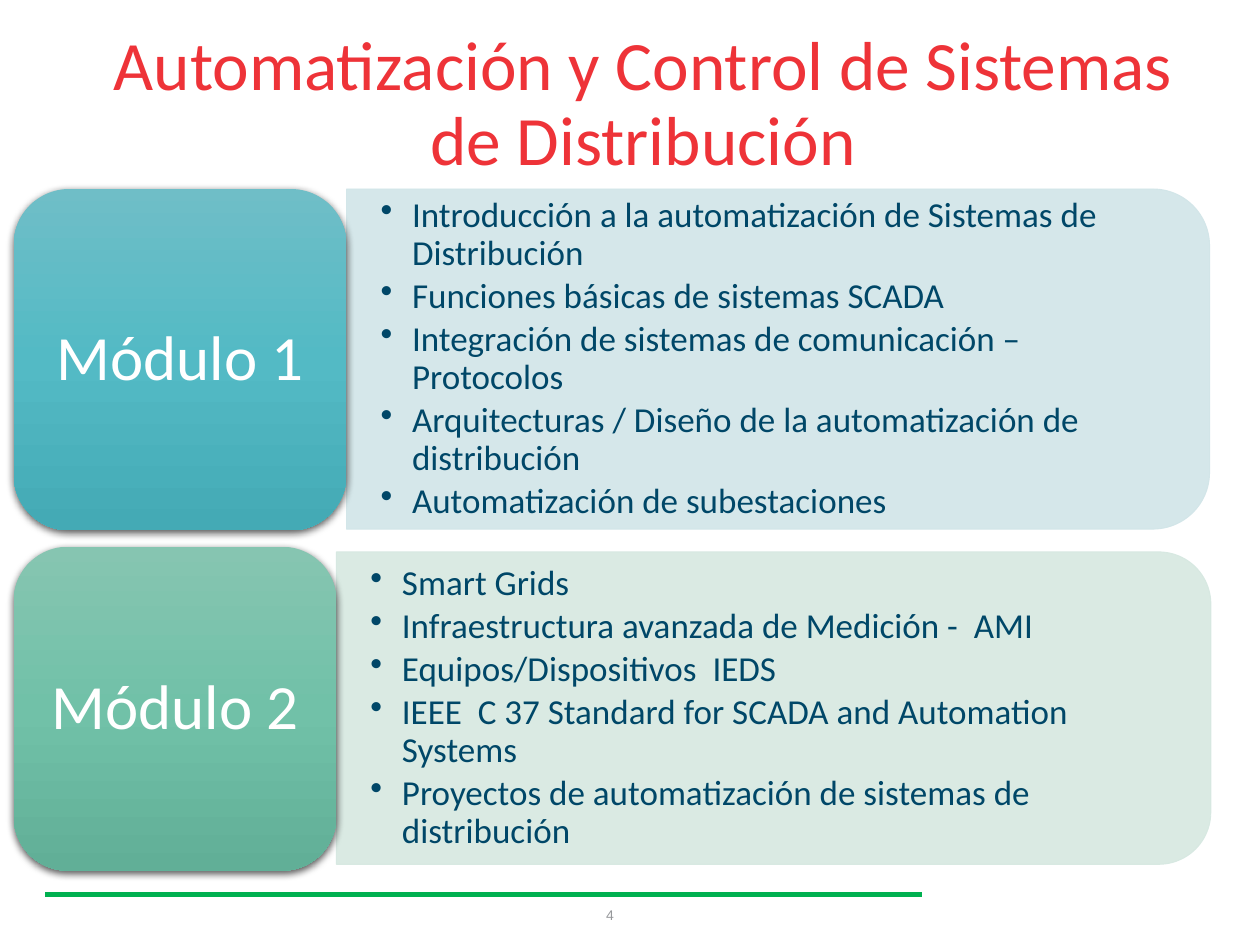
from dataclasses import dataclass

from pptx import Presentation
from pptx.dml.color import RGBColor
from pptx.enum.shapes import MSO_CONNECTOR, MSO_SHAPE
from pptx.enum.text import MSO_ANCHOR, PP_ALIGN
from pptx.oxml import parse_xml
from pptx.oxml.ns import qn
from pptx.util import Inches, Pt
from lxml import etree

NS = 'xmlns:a="http://schemas.openxmlformats.org/drawingml/2006/main"'
ROUND = MSO_SHAPE.ROUNDED_RECTANGLE
TAB = MSO_SHAPE.ROUND_2_SAME_RECTANGLE
STRAIGHT = MSO_CONNECTOR.STRAIGHT
MIDDLE = MSO_ANCHOR.MIDDLE
CENTER, LEFT, RIGHT = PP_ALIGN.CENTER, PP_ALIGN.LEFT, PP_ALIGN.RIGHT


@dataclass(frozen=True)
class Theme:
    font: str = "Calibri"
    small_font: str = "Arial"
    red: str = "EE3338"
    navy: str = "004768"
    white: str = "FFFFFF"
    gray: str = "96989B"
    green: str = "00B050"
    title: float = 39.6
    label: float = 36
    body: float = 20
    number: float = 8


THEME = Theme()

# Each module: name, topics, top, label size, panel top and size, colours
MODULES = [
    ("Módulo 1",
     ["Introducción a la automatización de Sistemas de Distribución",
      "Funciones básicas de sistemas SCADA",
      "Integración de sistemas de comunicación –Protocolos",
      "Arquitecturas / Diseño de la automatización de distribución",
      "Automatización de subestaciones"],
     (0.11, 1.5, 2.64, 2.71), (2.75, 1.5, 6.85, 2.7),
     ("6FBEC7", "53BAC5", "44AAB5"), "D1E5E8"),
    ("Módulo 2",
     ["Smart Grids",
      "Infraestructura avanzada de Medición -  AMI",
      "Equipos/Dispositivos  IEDS",
      "IEEE  C 37 Standard for SCADA and Automation Systems",
      "Proyectos de automatización de sistemas de distribución"],
     (0.11, 4.34, 2.56, 2.57), (2.67, 4.38, 6.94, 2.48),
     ("86C5B1", "71C1A8", "61AF97"), "D6E8E1"),
]


def add_text(slide, box, lines, size, color, align=LEFT, font=THEME.font,
             pad=(0.1, 0.05), after=0, bullet=False):
    frame = slide.shapes.add_textbox(*map(Inches, box)).text_frame
    frame.word_wrap = True
    frame.vertical_anchor = MIDDLE
    frame.margin_left = frame.margin_right = Inches(pad[0])
    frame.margin_top = frame.margin_bottom = Inches(pad[1])
    frame.text = "\n".join(lines)
    for para in frame.paragraphs:
        para.alignment = align
        para.line_spacing = 0.9
        para.space_after = Pt(after)
        if bullet:
            props = para._p.get_or_add_pPr()
            props.set("marL", str(Inches(0.25)))
            props.set("indent", str(-Inches(0.25)))
            etree.SubElement(props, qn("a:buChar")).set("char", "•")
        for run in para.runs:
            run.font.name = font
            run.font.size = Pt(size)
            run.font.color.rgb = RGBColor.from_string(color)


def fade(fill, percent):
    color = fill._xPr.find(qn("a:solidFill"))[0]
    etree.SubElement(color, qn("a:alpha")).set("val", str(percent * 1000))


def add_panel(slide, box, topics, color):
    """Place a tab turned a quarter, so that its round end faces right."""
    x, y, w, h = box
    turned = (x + (w - h) / 2, y + (h - w) / 2, h, w)
    tab = slide.shapes.add_shape(TAB, *map(Inches, turned))
    tab.rotation = 90
    tab.shadow.inherit = False
    tab.line.width = Pt(0.5)
    for fill in (tab.fill, tab.line.fill):
        fill.solid()
        fill.fore_color.rgb = RGBColor.from_string(color)
        fade(fill, 90)
    inset = 0.13
    add_text(slide, (x, y + inset, w - inset, h - 2 * inset), topics,
             THEME.body, THEME.navy, pad=(0.27, 0.14), after=3, bullet=True)


def add_label(slide, box, name, colors):
    x, y, w, h = box
    tile = slide.shapes.add_shape(ROUND, *map(Inches, box))
    tile.line.fill.background()
    tile.fill.background()
    stops = "".join(
        f'<a:gs pos="{i * 50000}"><a:srgbClr val="{color}"/></a:gs>'
        for i, color in enumerate(colors))
    props = tile._element.spPr
    props.replace(props.find(qn("a:noFill")), parse_xml(
        f'<a:gradFill {NS} rotWithShape="1"><a:gsLst>{stops}</a:gsLst>'
        '<a:lin ang="5400000" scaled="0"/></a:gradFill>'))
    props.append(parse_xml(
        f'<a:effectLst {NS}><a:outerShdw blurRad="{Pt(4.5)}" dist="{Pt(1.5)}" '
        'dir="5400000" rotWithShape="0"><a:srgbClr val="000000">'
        '<a:alpha val="63000"/></a:srgbClr></a:outerShdw></a:effectLst>'))
    inset = 0.13
    add_text(slide, (x + inset, y + inset, w - 2 * inset, h - 2 * inset),
             [name], THEME.label, THEME.white, CENTER, pad=(0.15, 0.07),
             after=12.6)


def add_footer(slide, box, number):
    x, y, w, h = box
    rule = slide.shapes.add_connector(
        STRAIGHT, *map(Inches, (x, y + 0.03, x + w, y + 0.03)))
    rule.line.color.rgb = RGBColor.from_string(THEME.green)
    rule.line.width = Pt(3)
    etree.SubElement(rule._element.spPr, qn("a:effectLst"))
    add_text(slide, (x + 2.36, y, 2.25, h), [number], THEME.number,
             THEME.gray, RIGHT, THEME.small_font)


def main():
    deck = Presentation()
    deck.slide_width, deck.slide_height = Inches(10), Inches(7.5)
    slide = deck.slides.add_slide(deck.slide_layouts[6])
    add_footer(slide, (0.36, 7.07, 6.96, 0.4), "4")
    add_text(slide, (0.61, 0.34, 8.99, 1),
             ["Automatización y Control de Sistemas de Distribución"],
             THEME.title, THEME.red, CENTER)
    for name, topics, tile, panel, colors, tint in MODULES:
        add_panel(slide, panel, topics, tint)
        add_label(slide, tile, name, colors)
    deck.save("out.pptx")


if __name__ == "__main__":
    main()
